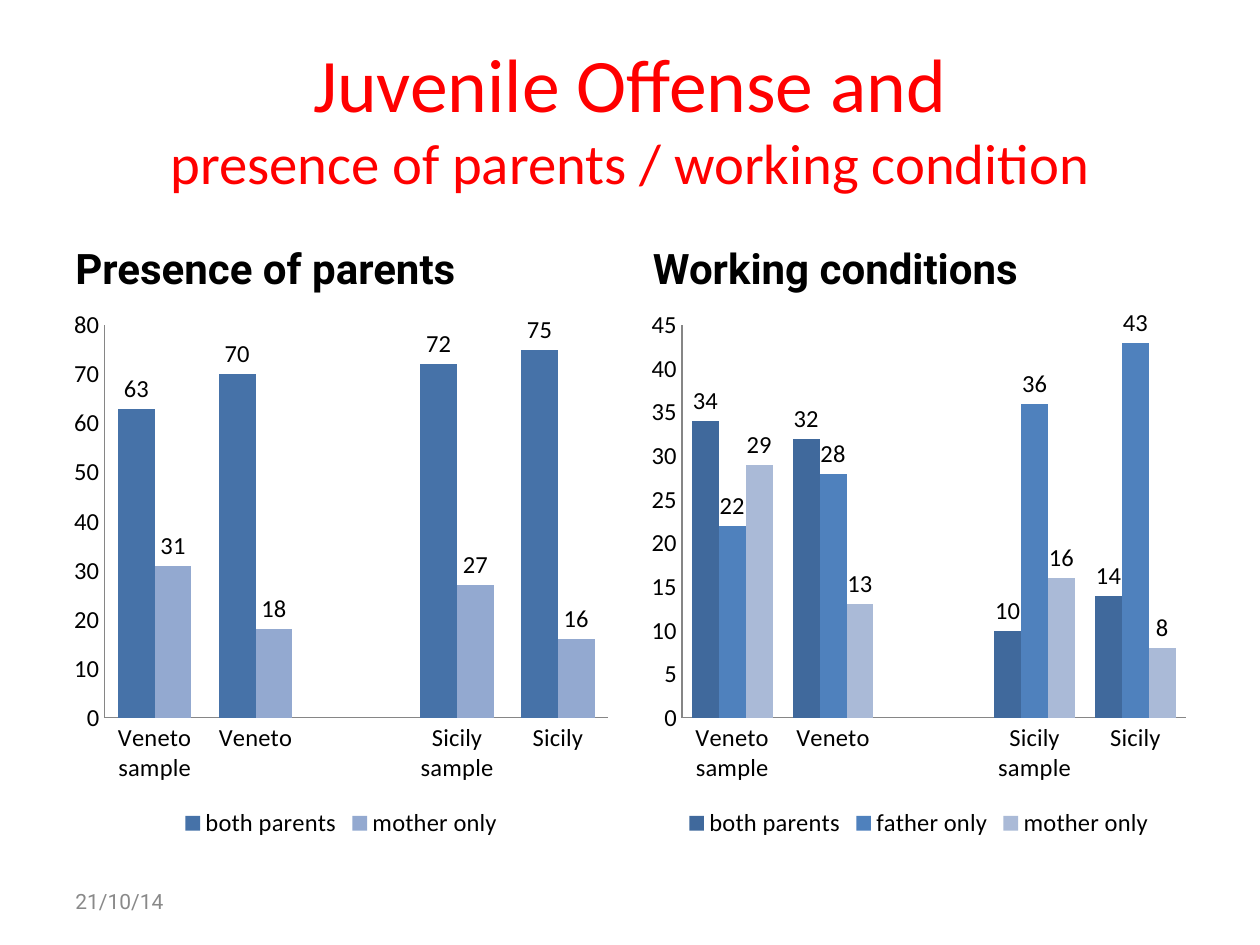
"""Build a slide comparing juvenile offense by presence and work of parents."""
import pptx
import pptx.chart.data
import pptx.dml.color
import pptx.enum.chart
import pptx.enum.text
import pptx.util

Pt = pptx.util.Pt
RGB = pptx.dml.color.RGBColor
Anchor = pptx.enum.text.MSO_ANCHOR
Align = pptx.enum.text.PP_ALIGN
Chart = pptx.enum.chart

RED = RGB(0xFF, 0x00, 0x00)
BLACK = RGB(0x00, 0x00, 0x00)
GREY = RGB(0x89, 0x89, 0x89)
AXIS_GREY = RGB(0x86, 0x86, 0x86)
STEEL = RGB(0x46, 0x72, 0xA8)
LAVENDER = RGB(0x93, 0xA9, 0xD0)
NAVY = RGB(0x40, 0x69, 0x9C)
BLUE = RGB(0x4F, 0x81, 0xBD)
PALE = RGB(0xAA, 0xBA, 0xD7)

MARGIN = 36
COLUMN_WIDTH = 318
CATEGORIES = ["Veneto sample", "Veneto", "", "Sicily sample", "Sicily"]
PANELS = [
    ("Presence of parents", 80, 10, [
        ("both parents", STEEL, (63, 70, None, 72, 75)),
        ("mother only", LAVENDER, (31, 18, None, 27, 16)),
    ]),
    ("Working conditions", 45, 5, [
        ("both parents", NAVY, (34, 32, None, 10, 14)),
        ("father only", BLUE, (22, 28, None, 36, 43)),
        ("mother only", PALE, (29, 13, None, 16, 8)),
    ]),
]


def apply(obj, **values):
    """Set each given value as an attribute of the object."""
    for name, value in values.items():
        setattr(obj, name, value)


def style_font(font, color, **values):
    """Set the colour and other values of a font."""
    apply(font, **values)
    font.color.rgb = color


def add_text(slide, box, lines, color, font_name, anchor, align=Align.LEFT, bold=False):
    """Add a text box with one paragraph of (text, size) lines."""
    tf = slide.shapes.add_textbox(*map(Pt, box)).text_frame
    apply(tf, word_wrap=True, vertical_anchor=anchor)
    p = tf.paragraphs[0]
    p.alignment = align
    for i, (text, size) in enumerate(lines):
        if i:
            p.add_line_break()
        r = p.add_run()
        r.text = text
        style_font(r.font, color, name=font_name, size=Pt(size), bold=bold)


def style_axis(axis):
    """Give an axis a thin grey line without ticks or gridlines."""
    apply(axis, has_major_gridlines=False,
          major_tick_mark=Chart.XL_TICK_MARK.NONE,
          minor_tick_mark=Chart.XL_TICK_MARK.NONE)
    axis.format.line.color.rgb = AXIS_GREY
    axis.format.line.width = Pt(0.75)


def add_column_chart(slide, box, maximum, step, series):
    """Add a clustered column chart with value labels."""
    data = pptx.chart.data.CategoryChartData(number_format="0")
    data.categories = CATEGORIES
    for name, _, values in series:
        data.add_series(name, values)
    chart = slide.shapes.add_chart(
        Chart.XL_CHART_TYPE.COLUMN_CLUSTERED, *map(Pt, box), data).chart
    style_font(chart.font, BLACK, name="Calibri", size=Pt(14))
    apply(chart, has_title=False, has_legend=True)
    apply(chart.legend, position=Chart.XL_LEGEND_POSITION.BOTTOM, include_in_layout=False)
    style_axis(chart.category_axis)
    style_axis(chart.value_axis)
    apply(chart.value_axis, minimum_scale=0, maximum_scale=maximum, major_unit=step)
    apply(chart.value_axis.tick_labels, number_format="0", number_format_is_linked=False)
    plot = chart.plots[0]
    apply(plot, gap_width=75, overlap=0, vary_by_categories=False, has_data_labels=True)
    apply(plot.data_labels, show_value=True, number_format="0",
          number_format_is_linked=False,
          position=Chart.XL_LABEL_POSITION.OUTSIDE_END)
    for s, (_, color, _) in zip(plot.series, series):
        s.format.fill.solid()
        s.format.fill.fore_color.rgb = color


def main():
    """Build and save the slide."""
    prs = pptx.Presentation()
    apply(prs, slide_width=Pt(720), slide_height=Pt(540))
    slide = prs.slides.add_slide(prs.slide_layouts[6])
    add_text(slide, (MARGIN, 21.6, 648, 90),
             [("Juvenile Offense and", 43.2),
              ("presence of parents / working condition", 32.4)],
             RED, "Calibri", Anchor.MIDDLE, Align.CENTER)
    for i, (heading, maximum, step, series) in enumerate(PANELS):
        left = MARGIN + i * (COLUMN_WIDTH + 12)
        add_text(slide, (left, 121, COLUMN_WIDTH, 50), [(heading, 24)],
                 BLACK, "Roboto", Anchor.BOTTOM, bold=True)
        add_column_chart(slide, (left, 171, COLUMN_WIDTH, 311), maximum, step, series)
    add_text(slide, (MARGIN, 500.5, 168, 29), [("21/10/14", 12)],
             GREY, "Roboto", Anchor.MIDDLE)
    prs.save("out.pptx")


if __name__ == "__main__":
    main()
